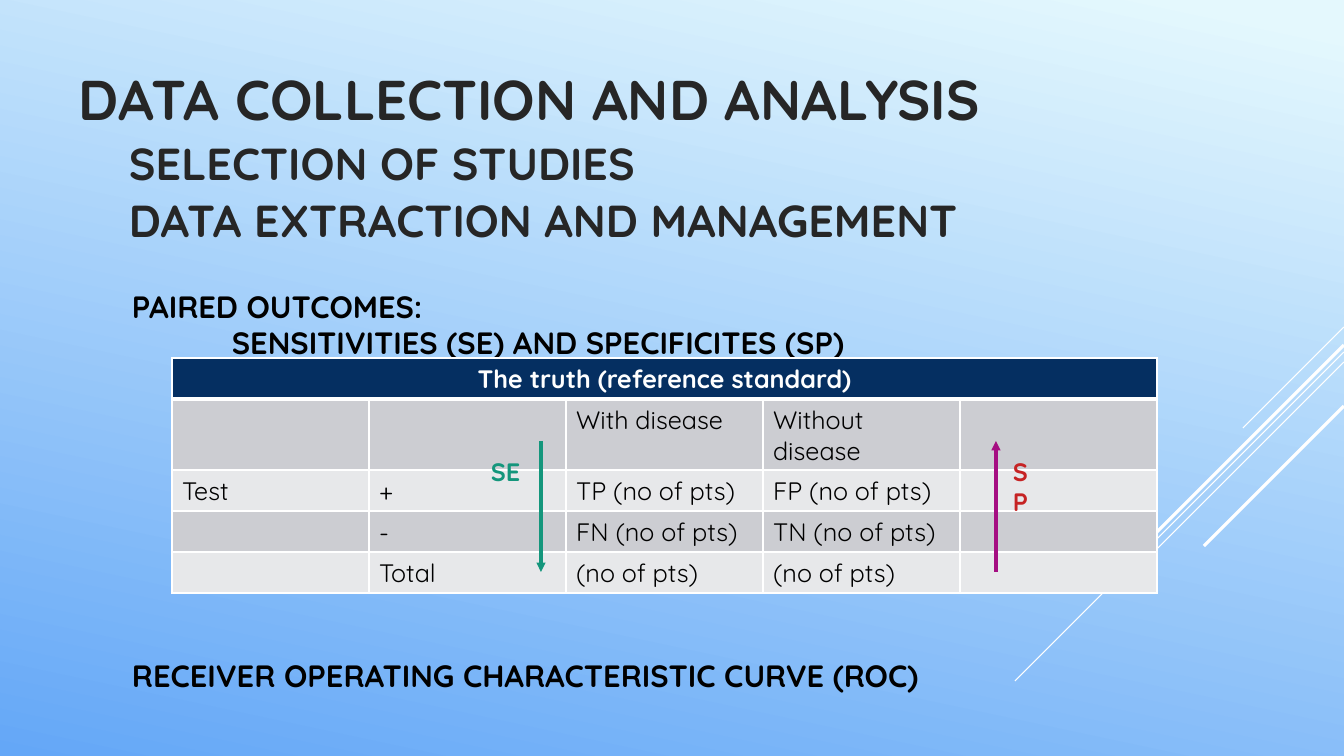
from lxml.etree import SubElement
from pptx import Presentation
from pptx.dml.color import RGBColor
from pptx.enum.shapes import MSO_CONNECTOR
from pptx.enum.text import MSO_ANCHOR, PP_ALIGN
from pptx.oxml.ns import qn
from pptx.util import Emu, Pt

# Content: text lines are (text, size pt, indent px, space before px)
FONT = "Quicksand"
BACKGROUND = [(0.03, "E4F8FD"), (1, "64A7F7")]
TITLE = [
    ("DATA COLLECTION AND ANALYSIS", 40, 0, 0),
    ("SELECTION OF STUDIES", 32, 50, 4),
    ("DATA EXTRACTION AND MANAGEMENT", 32, 50, 4),
]
OUTCOMES = [
    ("PAIRED OUTCOMES:", 22, 0, 0),
    ("SENSITIVITIES (SE) AND SPECIFICITES (SP)", 22, 100, 0),
    ("RECEIVER OPERATING CHARACTERISTIC CURVE (ROC)", 22, 0, 297),
]
TRUTH_TABLE = [
    ["The truth (reference standard)", "", "", "", ""],
    ["", "", "With disease", "Without disease", ""],
    ["Test", "+", "TP (no of pts)", "FP (no of pts)", ""],
    ["", "-", "FN (no of pts)", "TN (no of pts)", ""],
    ["", "Total", "(no of pts)", "(no of pts)", ""],
]
ROW_HEIGHTS = [41, 71, 41, 41, 41]
COLUMN_WIDTH = 197
HEADER_FILL, BAND_FILLS = "052F61", ["E7E8EA", "CCCDD2"]
# Diagonal rays: start y at the right edge, length of run, line width
RAYS = [(327, 101, 0.75), (352, 329, 0.75), (362, 209, 0.75),
        (345, 193, 2.25), (406, 140, 2.25)]
# Measures: arrow x, start y, end y, label, label left, label width, colours
MEASURES = [
    (541, 441, 572, "SE", 481, 51, "14967C", "14967C"),
    (996, 572, 441, "SP", 1003, 48, "A50E82", "C62324"),
]

SLIDE_WIDTH, SLIDE_HEIGHT = 1344, 756
SCALE = 914400 / 100.8


def px(length):
    return Emu(round(length * SCALE))


def color(value):
    return RGBColor.from_string(value)


def add_span(para, text, size, shade, bold=True):
    span = para.add_run()
    span.text = text
    span.font.name, span.font.size, span.font.bold = FONT, Pt(size), bold
    span.font.color.rgb = color(shade)


def add_text(page, area, lines, shade, anchor=MSO_ANCHOR.TOP, line_height=None):
    frame = page.shapes.add_textbox(*map(px, area)).text_frame
    frame.word_wrap = True
    frame.vertical_anchor = anchor
    for index, (text, size, indent, before) in enumerate(lines):
        para = frame.add_paragraph() if index else frame.paragraphs[0]
        para.space_before = px(before)
        if line_height:
            para.line_spacing = px(line_height)
        para._p.get_or_add_pPr().set("marL", str(int(px(indent))))
        add_span(para, text, size, shade)


def add_line(page, start, end, shade, width, arrow=False):
    line = page.shapes.add_connector(MSO_CONNECTOR.STRAIGHT, *map(px, start + end))
    line.line.color.rgb = color(shade)
    line.line.width = Pt(width)
    if arrow:
        SubElement(line.line._get_or_add_ln(), qn("a:tailEnd"), type="triangle")
    SubElement(line._element.spPr, qn("a:effectLst"))


def add_border(cell, side, width):
    edge = SubElement(cell._tc.get_or_add_tcPr(), qn("a:ln" + side), w=str(int(Pt(width))))
    fill = SubElement(edge, qn("a:solidFill"))
    SubElement(fill, qn("a:srgbClr"), val="FFFFFF")


def add_truth_table(page):
    columns = len(TRUTH_TABLE[0])
    area = (172, 358, columns * COLUMN_WIDTH, sum(ROW_HEIGHTS))
    table = page.shapes.add_table(len(TRUTH_TABLE), columns, *map(px, area)).table
    table.first_row = table.horz_banding = False
    for column in table.columns:
        column.width = px(COLUMN_WIDTH)
    for r, texts in enumerate(TRUTH_TABLE):
        table.rows[r].height = px(ROW_HEIGHTS[r])
        header = r == 0
        for c, text in enumerate(texts):
            cell = table.cell(r, c)
            for side in "LRTB":
                thick = (r, side) in [(0, "B"), (1, "T")]
                add_border(cell, side, 3 if thick else 1)
            cell.fill.solid()
            cell.fill.fore_color.rgb = color(HEADER_FILL if header else BAND_FILLS[r % 2])
            para = cell.text_frame.paragraphs[0]
            para.font.size = Pt(18)
            if text:
                add_span(para, text, 18, "FFFFFF" if header else "000000", header)
    title = table.cell(0, 0)
    title.merge(table.cell(0, columns - 1))
    title.text_frame.paragraphs[0].alignment = PP_ALIGN.CENTER


def main():
    deck = Presentation()
    deck.slide_width, deck.slide_height = px(SLIDE_WIDTH), px(SLIDE_HEIGHT)
    page = deck.slides.add_slide(deck.slide_layouts[6])

    # Background gradient and rays
    fill = page.background.fill
    fill.gradient()
    fill.gradient_angle = 258
    for stop, (position, shade) in zip(fill.gradient_stops, BACKGROUND):
        stop.position = position
        stop.color.rgb = color(shade)
    for y, run, width in RAYS:
        add_line(page, (SLIDE_WIDTH, y), (SLIDE_WIDTH - run, y + run), "FFFFFF", width)

    # Headings and table
    add_text(page, (69, 29, 1180, 253), TITLE, "262626", MSO_ANCHOR.MIDDLE)
    add_text(page, (122, 284, 905, 455), OUTCOMES, "000000", line_height=36)
    add_truth_table(page)

    # Arrows with their labels
    for x, start, end, label, left, width, arrow_shade, label_shade in MEASURES:
        add_line(page, (x, start), (x, end), arrow_shade, 2.25, arrow=True)
        add_text(page, (left, 451, width, 40), [(label, 18, 0, 0)], label_shade)

    deck.save("out.pptx")


if __name__ == "__main__":
    main()
